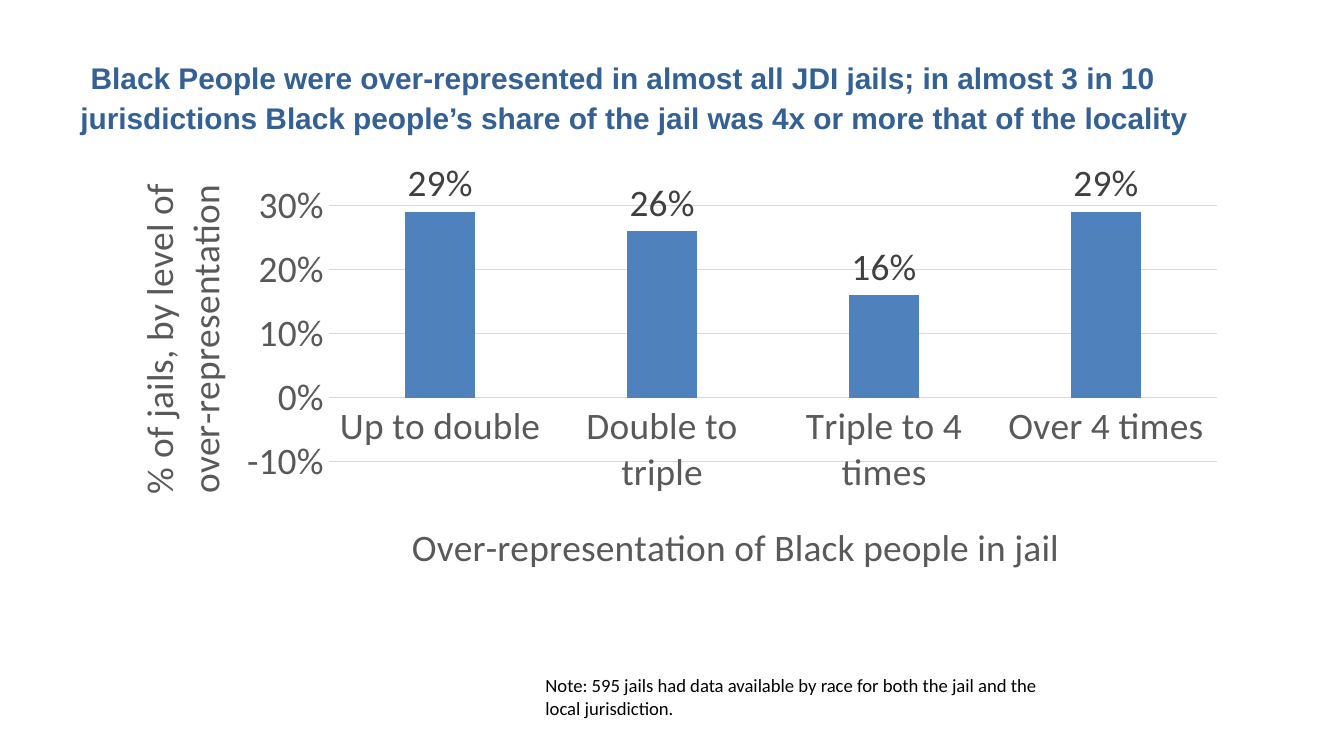
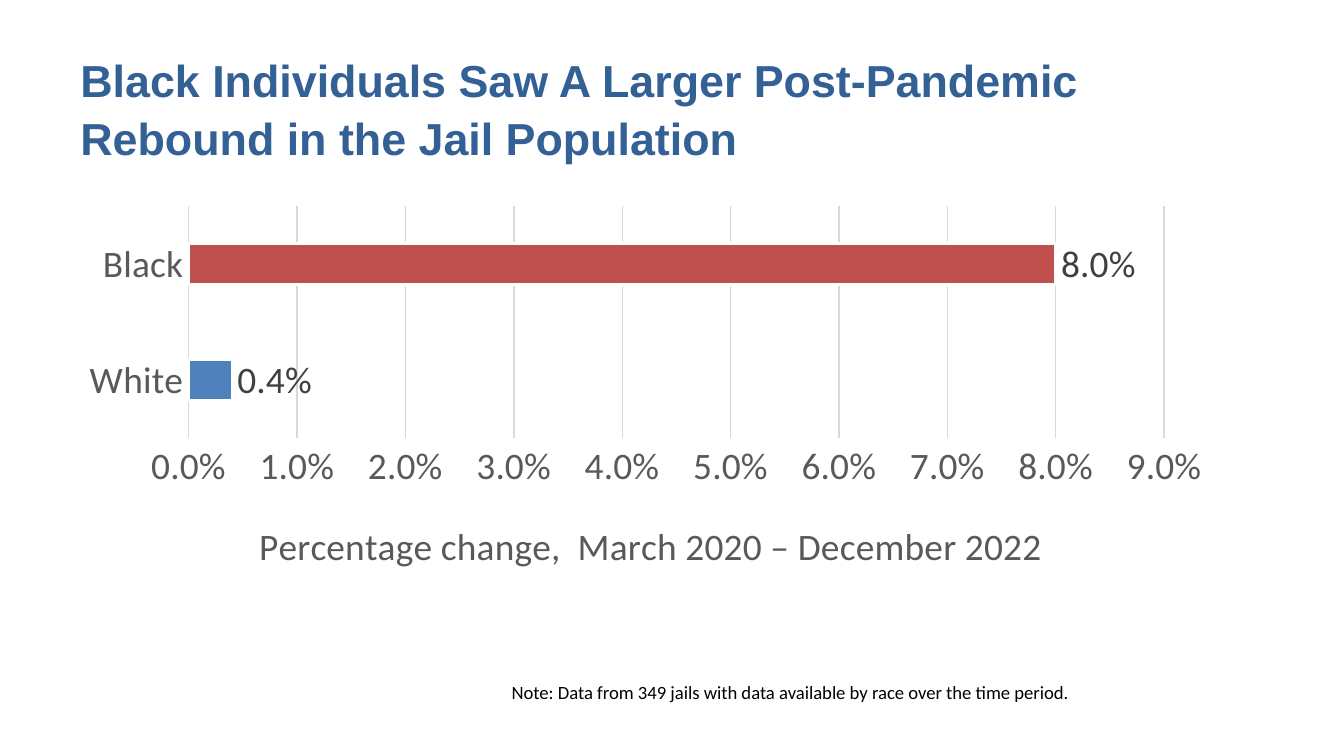
from lxml.etree import SubElement
from pptx import Presentation
from pptx.chart.data import CategoryChartData
from pptx.dml.color import RGBColor
from pptx.enum.chart import XL_CHART_TYPE as CT, XL_LABEL_POSITION as LP, XL_TICK_MARK as TM
from pptx.enum.text import MSO_ANCHOR
from pptx.oxml.ns import qn
from pptx.util import Cm, Pt

# Shared style
COLORS = {"title": "336195", "text": "000000", "axis": "595959", "label": "404040",
          "grid": "D9D9D9", "blue": "4F81BD", "red": "C0504D", "white": "FFFFFF"}
TITLE_BOX = (1.27, 0.81, 22.86, 1.5)
NOTE_FONT = {"size": Pt(10), "name": "Calibri"}
CHART_FONT = {"size": Pt(20), "name": "Calibri", "bold": False}

# Content: boxes in cm, layouts as fractions of the chart
SLIDES = [
    {
        "title": [(" ", 20),
                  ("Black People were over-represented in almost all JDI jails; in almost 3 in 10 "
                   "jurisdictions Black people’s share of the jail was 4x or more that of the "
                   "locality", 16)],
        "note": "Note: 595 jails had data available by race for both the jail and the "
                "local jurisdiction.",
        "note_box": (10.06, 12.62, 9.78, 1.12),
        "chart_box": (1.27, 2.79, 22.02, 9.35),
        "type": CT.COLUMN_CLUSTERED,
        "data": {"Up to double": 0.29, "Double to triple": 0.26,
                 "Triple to 4 times": 0.16, "Over 4 times": 0.29},
        "bars": ["blue"] * 4,
        "plot": {"gap_width": 219, "overlap": -27},
        "scale": {"minimum_scale": -0.1, "maximum_scale": 0.3, "major_unit": 0.1},
        "format": "0%",
        "layout": (0.225, 0.117, 0.762, 0.518),
        "cat_title": ("Over-representation of Black people in jail", (0.29, 0.74)),
        "val_title": ("% of jails, by level of over-representation", (0.05, 0.06)),
    },
    {
        "title": [("Black Individuals Saw A Larger Post-Pandemic Rebound in the Jail "
                   "Population", 24)],
        "note": "Note: Data from 349 jails with data available by race over the time period.",
        "note_box": (9.42, 12.75, 11.61, 0.69),
        "chart_box": (1.27, 3.73, 21.87, 7.37),
        "type": CT.BAR_CLUSTERED,
        "data": {"White": 0.004, "Black": 0.08},
        "bars": ["blue", "red"],
        "bar_line": "white",
        "plot": {"gap_width": 182},
        "scale": {"minimum_scale": 0, "maximum_scale": 0.09, "major_unit": 0.01},
        "format": "0.0%",
        "layout": (0.105, 0.022, 0.843, 0.595),
        "val_title": ("Percentage change,  March 2020 – December 2022", (0.16, 0.81)),
    },
]


def rgb(name):
    return RGBColor.from_string(COLORS[name])


def apply(obj, values):
    for key, value in values.items():
        setattr(obj, key, value)


def style_font(font, values, color):
    apply(font, values)
    font.color.rgb = rgb(color)


def style_line(line, color):
    line.color.rgb = rgb(color)
    line.width = Pt(0.75)


def add_text(s, box, runs, values, color, spacing=None):
    tf = s.shapes.add_textbox(*map(Cm, box)).text_frame
    apply(tf, {"word_wrap": True, "vertical_anchor": MSO_ANCHOR.TOP})
    p = tf.paragraphs[0]
    p.line_spacing = spacing
    for text, size in runs:
        r = p.add_run()
        r.text = text
        style_font(r.font, {**values, "size": Pt(size)}, color)


def set_layout(parent, index, numbers, inner=False):
    """Place a plot area or an axis title by fractions of the chart."""
    for old in parent.findall(qn("c:layout")):
        parent.remove(old)
    layout = SubElement(parent, qn("c:layout"))
    parent.insert(index, layout)
    manual = SubElement(layout, qn("c:manualLayout"))
    values = [("layoutTarget", "inner")] if inner else []
    values += [("xMode", "edge"), ("yMode", "edge"), *zip("xywh", numbers)]
    for tag, value in values:
        SubElement(manual, qn(f"c:{tag}")).set("val", str(value))


def add_axis_title(axis, text, place, upright):
    title = axis.axis_title
    p = title.text_frame.paragraphs[0]
    r = p.add_run()
    r.text = text
    style_font(r.font, CHART_FONT, "axis")
    body = title._element.find(".//" + qn("a:bodyPr"))
    body.set("rot", "-5400000" if upright else "0")
    body.set("vert", "horz")
    set_layout(title._element, 1, place)


def add_bar_chart(s, item):
    data = CategoryChartData(number_format=item["format"])
    data.categories = list(item["data"])
    data.add_series("Series 1", list(item["data"].values()))
    chart = s.shapes.add_chart(item["type"], *map(Cm, item["chart_box"]), data).chart
    apply(chart, {"has_legend": False, "has_title": False})
    style_font(chart.font, CHART_FONT, "text")

    # Axes
    cat, val = chart.category_axis, chart.value_axis
    for axis, key in ((cat, "cat_title"), (val, "val_title")):
        apply(axis, {"major_tick_mark": TM.NONE, "minor_tick_mark": TM.NONE})
        style_font(axis.tick_labels.font, CHART_FONT, "axis")
        if key in item:
            upright = axis is val and item["type"] == CT.COLUMN_CLUSTERED
            add_axis_title(axis, *item[key], upright)
    apply(val, {"has_major_gridlines": True, **item["scale"]})
    apply(val.tick_labels, {"number_format": item["format"], "number_format_is_linked": False})
    style_line(cat.format.line, "grid")
    style_line(val.major_gridlines.format.line, "grid")
    val.format.line.fill.background()

    # Bars and their labels
    plot = chart.plots[0]
    apply(plot, {"vary_by_categories": False, "has_data_labels": True, **item["plot"]})
    apply(plot.data_labels, {"show_value": True, "position": LP.OUTSIDE_END,
                             "number_format": item["format"],
                             "number_format_is_linked": False})
    style_font(plot.data_labels.font, CHART_FONT, "label")
    series = plot.series[0]
    series.invert_if_negative = False
    for i, color in enumerate(item["bars"]):
        bar = series.points[i].format
        bar.fill.solid()
        bar.fill.fore_color.rgb = rgb(color)
        if "bar_line" in item:
            bar.line.color.rgb = rgb(item["bar_line"])
            bar.line.width = Pt(1.5)
    set_layout(chart._chartSpace.find(".//" + qn("c:plotArea")), 0, item["layout"], inner=True)


def main():
    prs = Presentation()
    apply(prs, {"slide_width": Cm(25.4), "slide_height": Cm(14.29)})
    for item in SLIDES:
        s = prs.slides.add_slide(prs.slide_layouts[6])
        add_bar_chart(s, item)
        add_text(s, TITLE_BOX, item["title"], {"name": "Arial", "bold": True}, "title", 1.07)
        add_text(s, item["note_box"], [(item["note"], 10)], NOTE_FONT, "text")
    prs.save("out.pptx")


if __name__ == "__main__":
    main()
